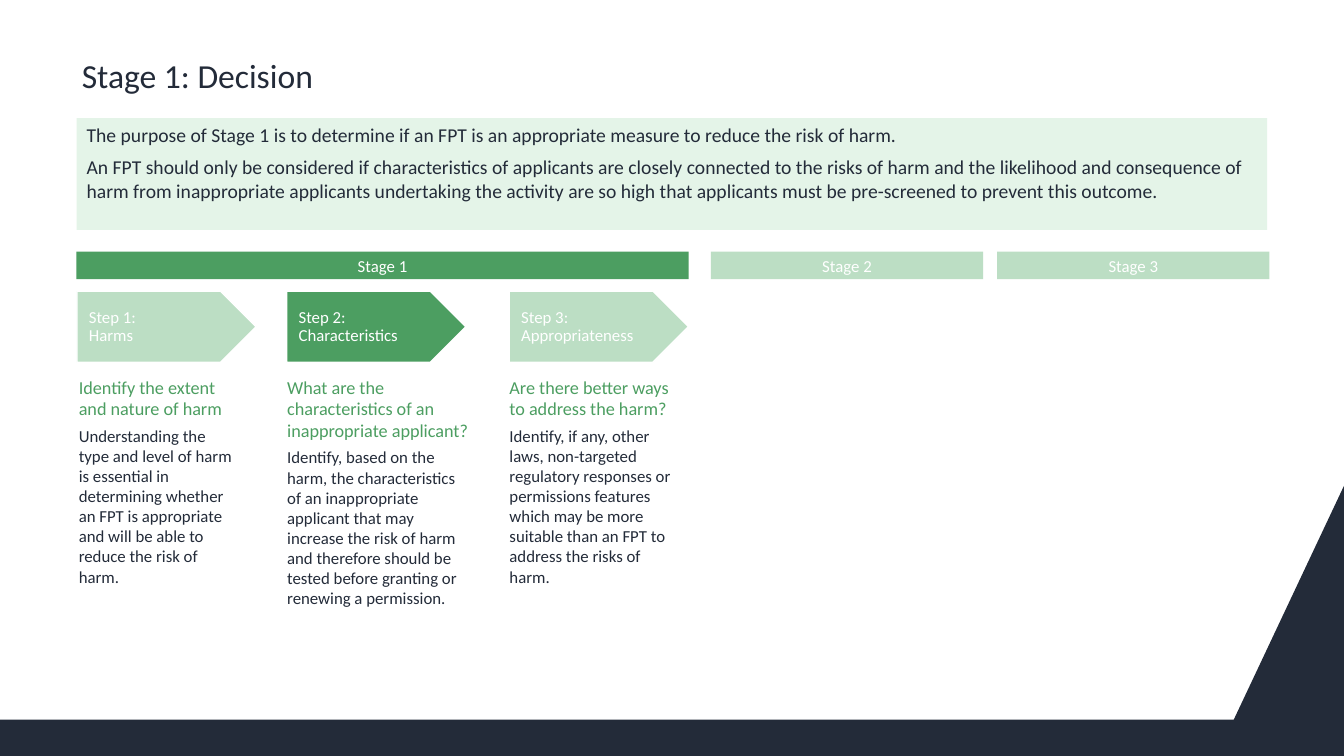
from pptx import Presentation
from pptx.dml.color import RGBColor
from pptx.enum import shapes, text
from pptx.util import Pt

NAVY, GREEN, PALE, MINT, WHITE = "232B39", "4C9E61", "BCDEC4", "E4F4E8", "FFFFFF"
TOP, MIDDLE, BOTTOM = text.MSO_ANCHOR.TOP, text.MSO_ANCHOR.MIDDLE, text.MSO_ANCHOR.BOTTOM
RECT, ARROW = shapes.MSO_SHAPE.RECTANGLE, shapes.MSO_SHAPE.PENTAGON


def style(sp, fill=None, anchor=TOP, insets=(7.2, 3.6, 7.2, 3.6)):
    """Set fill, anchor and text insets (left, top, right, bottom)."""
    if fill:
        sp.shadow.inherit = False
        sp.fill.solid()
        sp.fill.fore_color.rgb = RGBColor.from_string(fill)
        sp.line.fill.background()
    tf = sp.text_frame
    tf.word_wrap = True
    tf.auto_size = text.MSO_AUTO_SIZE.NONE
    tf.vertical_anchor = anchor
    tf.margin_left, tf.margin_top, tf.margin_right, tf.margin_bottom = map(Pt, insets)
    return tf


def write(p, lines, size, color, after=0, spacing=1.0, align=text.PP_ALIGN.LEFT):
    """Fill a paragraph with one run per line, parted by line breaks."""
    p.alignment, p.space_after, p.line_spacing = align, Pt(after), spacing
    for i, line in enumerate(lines):
        if i:
            p.add_line_break()
        r = p.add_run()
        r.text = line
        r.font.name, r.font.size = "Calibri", Pt(size)
        r.font.color.rgb = RGBColor.from_string(color)


prs = Presentation()
prs.slide_width, prs.slide_height = Pt(960), Pt(540)
s = prs.slides.add_slide(prs.slide_layouts[5])

# Footer band with rising corner
builder = s.shapes.build_freeform(Pt(881.3), Pt(514))
builder.add_line_segments([(Pt(x), Pt(y)) for x, y in
                           [(0, 514), (0, 540), (960, 540), (960, 347)]])
style(builder.convert_to_shape(), NAVY)

# Title
title = s.shapes.title
title.left, title.top, title.width, title.height = Pt(55.5), Pt(31.7), Pt(828), Pt(40.3)
tf = style(title, anchor=BOTTOM, insets=(2.9, 3.6, 2.9, 3.6))
write(tf.paragraphs[0], ["Stage 1: Decision"], 24, NAVY, spacing=0.9)

# Purpose
purpose = s.shapes.add_shape(RECT, Pt(54.8), Pt(84.4), Pt(850.3), Pt(79.9))
tf = style(purpose, MINT)
write(tf.paragraphs[0], ["The purpose of Stage 1 is to determine if an FPT is an appropriate "
                         "measure to reduce the risk of harm."], 14, NAVY, after=6)
write(tf.add_paragraph(), [
    "An FPT should only be considered if characteristics of applicants are closely connected to "
    "the risks of harm and the likelihood and consequence of harm from inappropriate applicants "
    "undertaking the activity are so high that applicants must be pre-screened to prevent this "
    "outcome."], 14, NAVY, after=6)

# Stage bars
for name, left, width, fill in [("Stage 1", 54.5, 437.5, GREEN),
                                ("Stage 2", 507.8, 194.5, PALE),
                                ("Stage 3", 712.3, 194.5, PALE)]:
    bar = s.shapes.add_shape(RECT, Pt(left), Pt(179.8), Pt(width), Pt(19.6))
    tf = style(bar, fill, MIDDLE)
    write(tf.paragraphs[0], [name], 12, WHITE, align=text.PP_ALIGN.CENTER)

# Steps: arrow left, arrow fill, label, column left and width, question, explanation
steps = [
    (55, PALE, ["Step 1:", "Harms"], 47.8, 129.6,
     "Identify the extent and nature of harm",
     "Understanding the type and level of harm is essential in determining whether an FPT is "
     "appropriate and will be able to reduce the risk of harm."),
    (204.8, GREEN, ["Step 2:", "Characteristics"], 196.6, 149.8,
     "What are the characteristics of an inappropriate applicant?",
     "Identify, based on the harm, the characteristics of an inappropriate applicant that may "
     "increase the risk of harm and therefore should be tested before granting or renewing a "
     "permission."),
    (363.8, PALE, ["Step 3:", "Appropriateness"], 355.4, 136.1,
     "Are there better ways to address the harm?",
     "Identify, if any, other laws, non-targeted regulatory responses or permissions features "
     "which may be more suitable than an FPT to address the risks of harm."),
]
for arrow_left, fill, label, left, width, question, explanation in steps:
    column = s.shapes.add_shape(RECT, Pt(left), Pt(260), Pt(width), Pt(224.6))
    tf = style(column, WHITE, insets=(8.5, 8.5, 8.5, 5.7))
    write(tf.paragraphs[0], [question], 13, GREEN, after=4)
    write(tf.add_paragraph(), [explanation], 12, NAVY, after=4)

    arrow = s.shapes.add_shape(ARROW, Pt(arrow_left), Pt(208), Pt(128), Pt(50.8))
    tf = style(arrow, fill, MIDDLE, insets=(8.5, 1.4, 8.5, 1.4))
    arrow.line.color.rgb = RGBColor.from_string(WHITE)
    arrow.line.width = Pt(1)
    write(tf.paragraphs[0], label, 12, WHITE, spacing=0.9)

prs.save("out.pptx")
